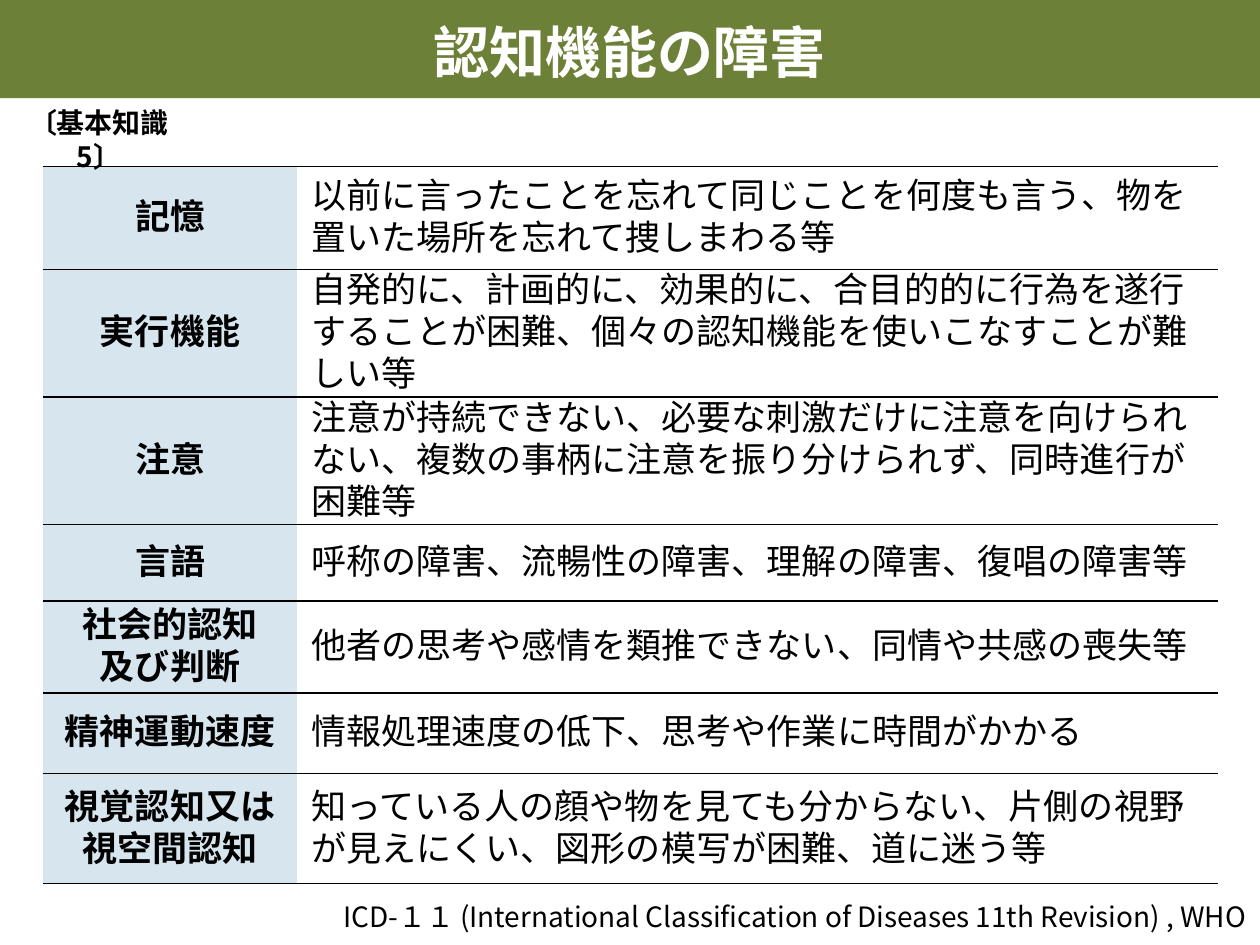
from lxml.etree import SubElement
from pptx import Presentation
from pptx.dml.color import RGBColor
from pptx.enum.shapes import MSO_SHAPE
from pptx.enum.text import MSO_ANCHOR, PP_ALIGN
from pptx.oxml.ns import qn
from pptx.util import Inches, Pt

# Content
TITLE = "認知機能の障害"
TAG = "〔基本知識 5〕"
SOURCE = "ICD-１１ (International Classification of Diseases 11th Revision) , WHO"
# (function, description, row height in inches)
FUNCTIONS = [
    ("記憶", "以前に言ったことを忘れて同じことを何度も言う、物を置いた場所を忘れて捜しまわる等", 0.82),
    ("実行機能", "自発的に、計画的に、効果的に、合目的的に行為を遂行することが困難、"
     "個々の認知機能を使いこなすことが難しい等", 0.96),
    ("注意", "注意が持続できない、必要な刺激だけに注意を向けられない、"
     "複数の事柄に注意を振り分けられず、同時進行が困難等", 0.96),
    ("言語", "呼称の障害、流暢性の障害、理解の障害、復唱の障害等", 0.61),
    ("社会的認知\n及び判断", "他者の思考や感情を類推できない、同情や共感の喪失等", 0.73),
    ("精神運動速度", "情報処理速度の低下、思考や作業に時間がかかる", 0.64),
    ("視覚認知又は\n視空間認知", "知っている人の顔や物を見ても分からない、片側の視野が見えにくい、"
     "図形の模写が困難、道に迷う等", 0.87),
]

# Look
COLORS = {"band": "6D8038", "label": "D6E5EE", "white": "FFFFFF", "black": "000000"}
FONT = "Noto Sans CJK JP"
WIDTH, HEIGHT = 10, 7.5
BAND_HEIGHT = 0.78
TABLE_LEFT, TABLE_TOP = 0.34, 1.32
COLUMNS = (2.02, 7.31)


def color(name):
    return RGBColor.from_string(COLORS[name])


def write(frame, text, size=20, ink="black", bold=False, align=PP_ALIGN.LEFT,
          leading=None, indent=0):
    frame.word_wrap = True
    for number, line in enumerate(text.split("\n")):
        paragraph = frame.paragraphs[0] if number == 0 else frame.add_paragraph()
        paragraph.alignment = align
        if leading:
            paragraph.line_spacing = Pt(leading)
        if indent:
            properties = paragraph._p.get_or_add_pPr()
            properties.set("marL", str(Inches(indent)))
            properties.set("indent", "0")
        run = paragraph.add_run()
        run.text = line
        run.font.size, run.font.bold, run.font.name = Pt(size), bold, FONT
        run.font.color.rgb = color(ink)
        east_asian = SubElement(run._r.get_or_add_rPr(), qn("a:ea"))
        east_asian.set("typeface", FONT)


def add_text(slide, box, text, anchor=MSO_ANCHOR.TOP, **style):
    frame = slide.shapes.add_textbox(*map(Inches, box)).text_frame
    frame.vertical_anchor = anchor
    write(frame, text, **style)


def rule_rows(cell):
    """Draw lines above and below the cell, none at its sides."""
    properties = cell._tc.get_or_add_tcPr()
    for side in ("lnL", "lnR"):
        SubElement(SubElement(properties, qn(f"a:{side}"), w="0"), qn("a:noFill"))
    for side in ("lnT", "lnB"):
        line = SubElement(properties, qn(f"a:{side}"), w=str(Pt(1)))
        fill = SubElement(line, qn("a:solidFill"))
        SubElement(fill, qn("a:srgbClr"), val=COLORS["black"])


def fill_cell(cell, text, background, **style):
    cell.margin_left = cell.margin_right = cell.margin_top = Inches(0.01)
    cell.margin_bottom = 0
    cell.vertical_anchor = MSO_ANCHOR.MIDDLE
    rule_rows(cell)
    cell.fill.solid()
    cell.fill.fore_color.rgb = color(background)
    write(cell.text_frame, text, leading=24, **style)


def add_functions(slide):
    height = sum(row[2] for row in FUNCTIONS)
    table = slide.shapes.add_table(
        len(FUNCTIONS), len(COLUMNS), Inches(TABLE_LEFT), Inches(TABLE_TOP),
        Inches(sum(COLUMNS)), Inches(height)).table
    table.first_row = table.horz_banding = False
    for column, width in zip(table.columns, COLUMNS):
        column.width = Inches(width)
    for row, (function, description, row_height) in zip(table.rows, FUNCTIONS):
        row.height = Inches(row_height)
        fill_cell(row.cells[0], function, "label", bold=True, align=PP_ALIGN.CENTER)
        fill_cell(row.cells[1], description, "white", indent=0.1)


def main():
    deck = Presentation()
    deck.slide_width, deck.slide_height = Inches(WIDTH), Inches(HEIGHT)
    slide = deck.slides.add_slide(deck.slide_layouts[6])

    add_functions(slide)

    # Title band
    band = slide.shapes.add_shape(
        MSO_SHAPE.RECTANGLE, 0, 0, Inches(WIDTH), Inches(BAND_HEIGHT))
    band.shadow.inherit = False
    band.fill.solid()
    band.fill.fore_color.rgb = color("band")
    band.line.fill.background()
    add_text(slide, (0.2 * WIDTH, 0.03, 0.6 * WIDTH, 0.73), TITLE, MSO_ANCHOR.MIDDLE,
             size=32, ink="white", bold=True, align=PP_ALIGN.CENTER, leading=40)

    # Source line and section tag
    add_text(slide, (1.01, 7.09, 8.98, 0.37), SOURCE, size=16, align=PP_ALIGN.RIGHT)
    add_text(slide, (0, 0.79, 1.57, 0.37), TAG, size=16, bold=True,
             align=PP_ALIGN.CENTER)

    deck.save("out.pptx")


if __name__ == "__main__":
    main()
